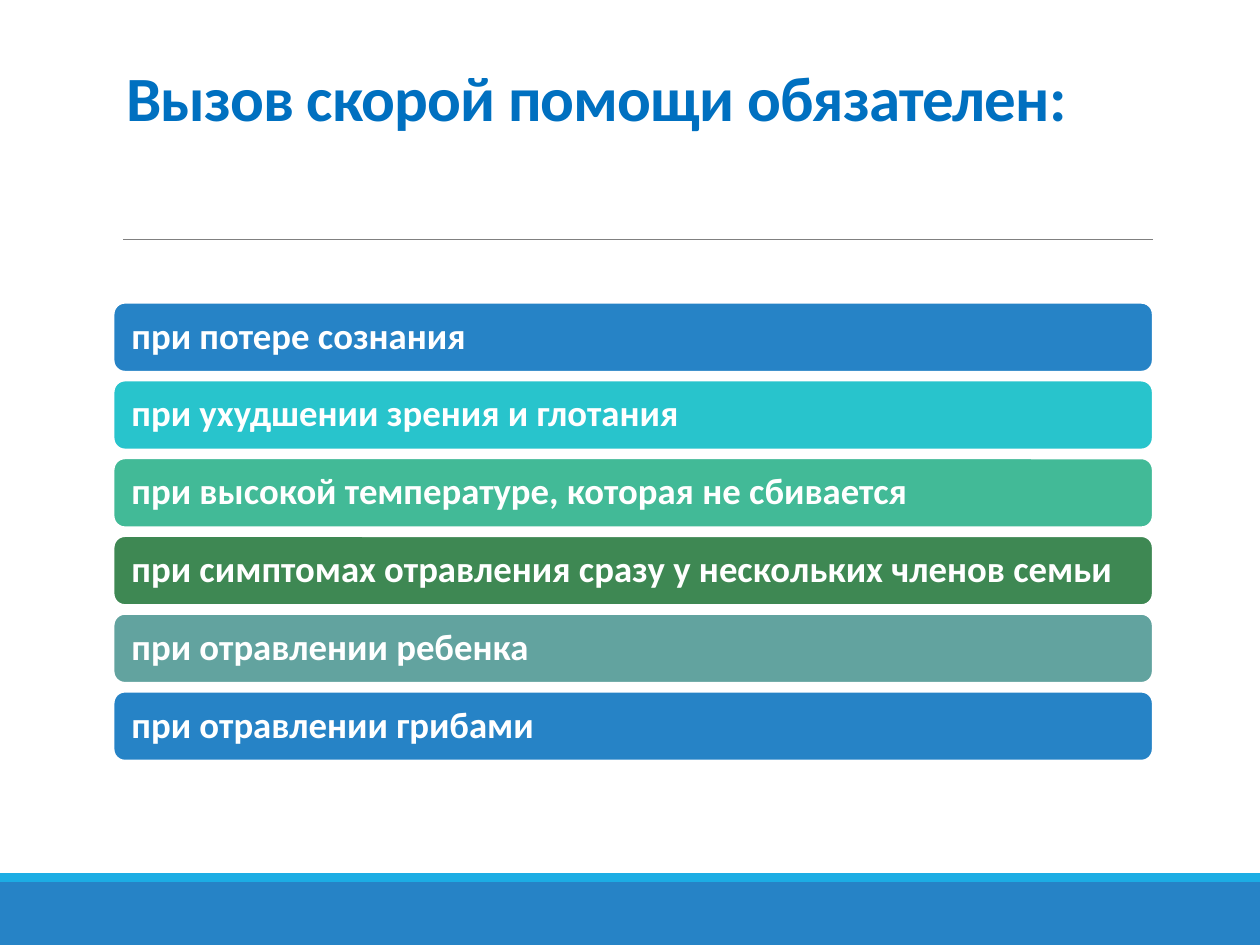
from dataclasses import dataclass

from lxml import etree
from pptx import Presentation
from pptx import util as u
from pptx.dml import color
from pptx.enum import shapes, text
from pptx.oxml import ns


@dataclass(frozen=True)
class Theme:
    font: str = "Calibri"
    title_size: float = 36
    bar_size: float = 21
    title: str = "0070C0"
    white: str = "FFFFFF"
    rule: str = "808080"
    blue: str = "2683C6"
    sky: str = "1CADE4"
    turquoise: str = "28C4CC"
    mint: str = "42BA97"
    green: str = "3E8853"
    sage: str = "62A39F"


THEME = Theme()
WIDTH, HEIGHT = 720, 540
LEFT, CONTENT_WIDTH = 64.8, 594
BAR_TOP, BAR_HEIGHT, BAR_STEP = 172.9, 39.6, 44.45
BARS = [
    ("при потере сознания", THEME.blue),
    ("при ухудшении зрения и глотания", THEME.turquoise),
    ("при высокой температуре, которая не сбивается", THEME.mint),
    ("при симптомах отравления сразу у нескольких членов семьи", THEME.green),
    ("при отравлении ребенка", THEME.sage),
    ("при отравлении грибами", THEME.blue),
]


def apply(target, values):
    for name, value in values.items():
        setattr(target, name, value)


def rgb(value):
    return color.RGBColor.from_string(value)


def write_text(shape, content, size, fill, spacing, frame_values):
    frame = shape.text_frame
    apply(frame, {"word_wrap": True, "auto_size": text.MSO_AUTO_SIZE.NONE, **frame_values})
    paragraph = frame.paragraphs[0]
    apply(paragraph, {"alignment": text.PP_ALIGN.LEFT, "line_spacing": spacing})
    run = paragraph.add_run()
    run.text = content
    apply(run.font, {"name": THEME.font, "size": u.Pt(size), "bold": True})
    run.font.color.rgb = rgb(fill)
    return run


def add_block(container, kind, left, top, width, height, fill, outline=None):
    shape = container.add_shape(kind, u.Pt(left), u.Pt(top), u.Pt(width), u.Pt(height))
    shape.shadow.inherit = False
    shape.fill.solid()
    shape.fill.fore_color.rgb = rgb(fill)
    if outline:
        shape.line.color.rgb = rgb(outline)
        shape.line.width = u.Pt(1.25)
    else:
        shape.line.fill.background()
    return shape


def add_rule(slide, left, right, top):
    rule = slide.shapes.add_connector(
        shapes.MSO_CONNECTOR.STRAIGHT, u.Pt(left), u.Pt(top), u.Pt(right), u.Pt(top))
    rule.line.color.rgb = rgb(THEME.rule)
    rule.line.width = u.Pt(0.5)
    etree.SubElement(rule._element.spPr, ns.qn("a:effectLst"))


def add_title(slide, content):
    title = slide.shapes.title
    apply(title, {"left": u.Pt(LEFT), "top": u.Pt(22.3),
                  "width": u.Pt(CONTENT_WIDTH), "height": u.Pt(114.5)})
    run = write_text(title, content, THEME.title_size, THEME.title, 0.85, {
        "vertical_anchor": text.MSO_ANCHOR.BOTTOM, "margin_bottom": u.Pt(60)})
    run._r.get_or_add_rPr().set("spc", "-50")


def add_bars(slide):
    group = slide.shapes.add_group_shape()
    for index, (content, fill) in enumerate(BARS):
        bar = add_block(group.shapes, shapes.MSO_SHAPE.ROUNDED_RECTANGLE, LEFT,
                        BAR_TOP + index * BAR_STEP, CONTENT_WIDTH, BAR_HEIGHT,
                        fill, THEME.white)
        write_text(bar, content, THEME.bar_size, THEME.white, 0.9, {
            "vertical_anchor": text.MSO_ANCHOR.MIDDLE, "margin_left": u.Pt(8.4)})


def add_footer(slide):
    for top, height, fill in ((504, 36, THEME.blue), (499, 5, THEME.sky)):
        add_block(slide.shapes, shapes.MSO_SHAPE.RECTANGLE, 0, top, WIDTH, height, fill)


def main():
    presentation = Presentation()
    apply(presentation, {"slide_width": u.Pt(WIDTH), "slide_height": u.Pt(HEIGHT)})
    slide = presentation.slides.add_slide(presentation.slide_layouts[5])
    add_footer(slide)
    add_rule(slide, 70.5, 658.8, 136.8)
    add_title(slide, "Вызов скорой помощи обязателен:")
    add_bars(slide)
    presentation.save("out.pptx")


if __name__ == "__main__":
    main()
